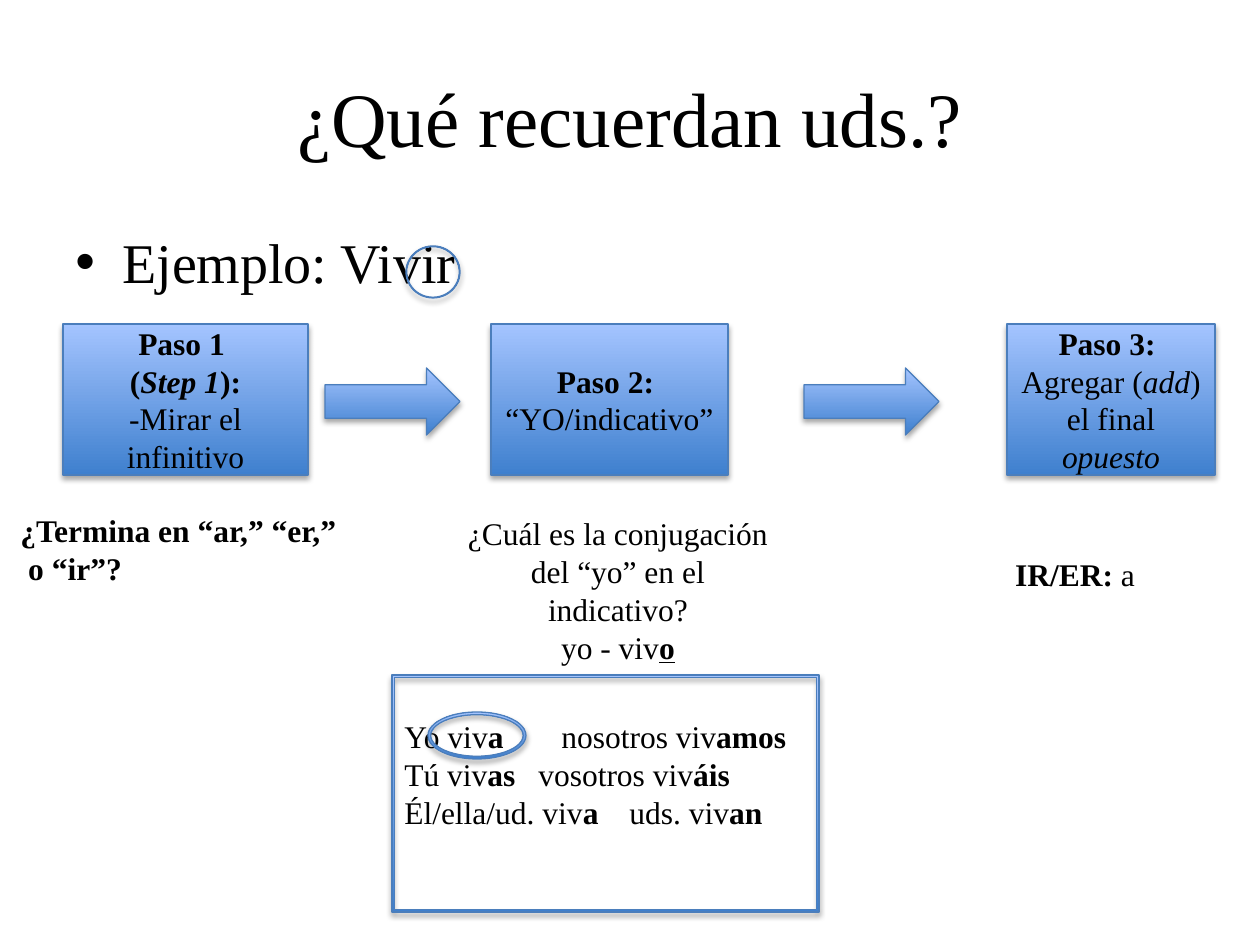
from lxml.etree import SubElement
from pptx import Presentation
from pptx.dml.color import RGBColor
from pptx.enum.shapes import MSO_SHAPE
from pptx.enum.text import MSO_ANCHOR, PP_ALIGN
from pptx.oxml import parse_xml
from pptx.oxml.ns import nsdecls, qn
from pptx.util import Pt

EMU_PER_PX = 914400 / 126
FONT = "Times New Roman"
COLORS = {"text": "000000", "light": "A4C4FF", "dark": "3F80CE", "line": "4B7EBC"}


def px(length):
    return round(length * EMU_PER_PX)


def color(name):
    return RGBColor.from_string(COLORS[name])


def add_runs(paragraph, runs, size=18):
    """Each run is (text, style), where style holds any of the letters b, i, u."""
    for text, style in runs:
        run = paragraph.add_run()
        run.text = text
        font = run.font
        font.name, font.size = FONT, Pt(size)
        font.color.rgb = color("text")
        font.bold, font.italic, font.underline = (letter in style for letter in "biu")


def write(frame, paragraphs, align=PP_ALIGN.CENTER, size=18):
    for index, runs in enumerate(paragraphs):
        paragraph = frame.paragraphs[0] if index == 0 else frame.add_paragraph()
        paragraph.alignment = align
        add_runs(paragraph, runs, size)


def add_text(slide, box, paragraphs, align=PP_ALIGN.CENTER, size=18, wrap=True):
    frame = slide.shapes.add_textbox(*map(px, box)).text_frame
    frame.word_wrap = wrap
    write(frame, paragraphs, align, size)
    return frame


def add_glossy(slide, kind, box, adjustment=None):
    """Shape with the blue gradient, thin outline and soft shadow."""
    shape = slide.shapes.add_shape(kind, *map(px, box))
    if adjustment is not None:
        shape.adjustments[0] = adjustment
    shape.fill.gradient()
    shape.fill.gradient_angle = 90
    for stop, name in zip(shape.fill.gradient_stops, ("dark", "light")):
        stop.color.rgb = color(name)
    shape.line.color.rgb = color("line")
    shape.line.width = Pt(0.75)
    shape.shadow.inherit = False
    effects = shape._element.spPr.find(qn("a:effectLst"))
    effects.append(parse_xml(
        f'<a:outerShdw {nsdecls("a")} blurRad="{Pt(3.1)}" dist="{Pt(1.8)}" dir="5400000" '
        'rotWithShape="0"><a:srgbClr val="000000"><a:alpha val="35000"/></a:srgbClr>'
        '</a:outerShdw>'))
    return shape


def add_step(slide, left, width, paragraphs):
    frame = add_glossy(slide, MSO_SHAPE.FLOWCHART_PROCESS, (left, 324, width, 151)).text_frame
    frame.word_wrap = True
    frame.vertical_anchor = MSO_ANCHOR.MIDDLE
    write(frame, paragraphs)


def set_bullet(paragraph, indent):
    paragraph.space_before = Pt(6)
    properties = paragraph._p.get_or_add_pPr()
    properties.set("marL", str(px(indent)))
    properties.set("indent", str(-px(indent)))
    SubElement(properties, qn("a:buFont"), typeface="Arial")
    SubElement(properties, qn("a:buChar"), char="•")


def set_tab(paragraph, position):
    tabs = SubElement(paragraph._p.get_or_add_pPr(), qn("a:tabLst"))
    SubElement(tabs, qn("a:tab"), pos=str(px(position)), algn="l")


def main():
    presentation = Presentation()
    presentation.slide_width, presentation.slide_height = px(1260), px(945)
    slide = presentation.slides.add_slide(presentation.slide_layouts[5])

    # Title and example
    title = slide.shapes.title
    title.left, title.top, title.width, title.height = map(px, (63, 38, 1134, 157))
    write(title.text_frame, [[("¿Qué recuerdan uds.?", "")]], size=44)
    example = add_text(slide, (63, 221, 1134, 80), [[("Ejemplo: Vivir", "")]],
                       PP_ALIGN.LEFT, 32)
    set_bullet(example.paragraphs[0], 47)

    # Three steps with arrows between them
    add_step(slide, 63, 245, [
        [("Paso 1 ", "b")],
        [("(", "b"), ("Step 1", "bi"), ("):", "b")],
        [("-Mirar el infinitivo", "")]])
    add_step(slide, 491, 237, [[("Paso 2: ", "b")], [("“YO/indicativo”", "")]])
    add_step(slide, 1007, 208, [
        [("Paso 3: ", "b")],
        [("Agregar (", ""), ("add", "i"), (")", "")],
        [("el final ", ""), ("opuesto", "i")]])
    for left in (325, 804):
        add_glossy(slide, MSO_SHAPE.RIGHT_ARROW, (left, 368, 135, 67))

    # Ring around the verb ending
    add_glossy(slide, MSO_SHAPE.DONUT, (406, 246, 54, 52), 0.013)

    # Answers under the steps
    add_text(slide, (8, 505, 384, 89),
             [[("¿Termina en “ar,” “er,”", "b")], [(" o “ir”?", "b")]],
             PP_ALIGN.LEFT, wrap=False)
    add_text(slide, (450, 508, 336, 165), [
        [("¿Cuál es la conjugación del “yo” en el indicativo?", "")],
        [("yo - viv", ""), ("o", "bu")]])
    add_text(slide, (876, 549, 398, 50), [[("IR/ER: ", "b"), ("a", "")]])

    # Framed conjugation: singular and plural, with the tab between them
    add_glossy(slide, MSO_SHAPE.FRAME, (392, 675, 427, 237), 0.01)
    conjugation = [
        ("Yo viv", "a", 157, "nosotros viv", "amos"),
        ("Tú viv", "as", 134, "vosotros viv", "áis"),
        ("Él/ella/ud. viv", "a", 225, "uds. viv", "an"),
    ]
    forms = add_text(slide, (392, 711, 431, 165), [
        [(singular, ""), (ending + "\t", "b"), (plural, ""), (plural_ending, "b")]
        for singular, ending, _, plural, plural_ending in conjugation], PP_ALIGN.LEFT)
    for paragraph, (_, _, tab, _, _) in zip(forms.paragraphs, conjugation):
        set_tab(paragraph, tab)
    add_glossy(slide, MSO_SHAPE.DONUT, (428, 712, 98, 47), 0.058)

    presentation.save("out.pptx")


if __name__ == "__main__":
    main()
